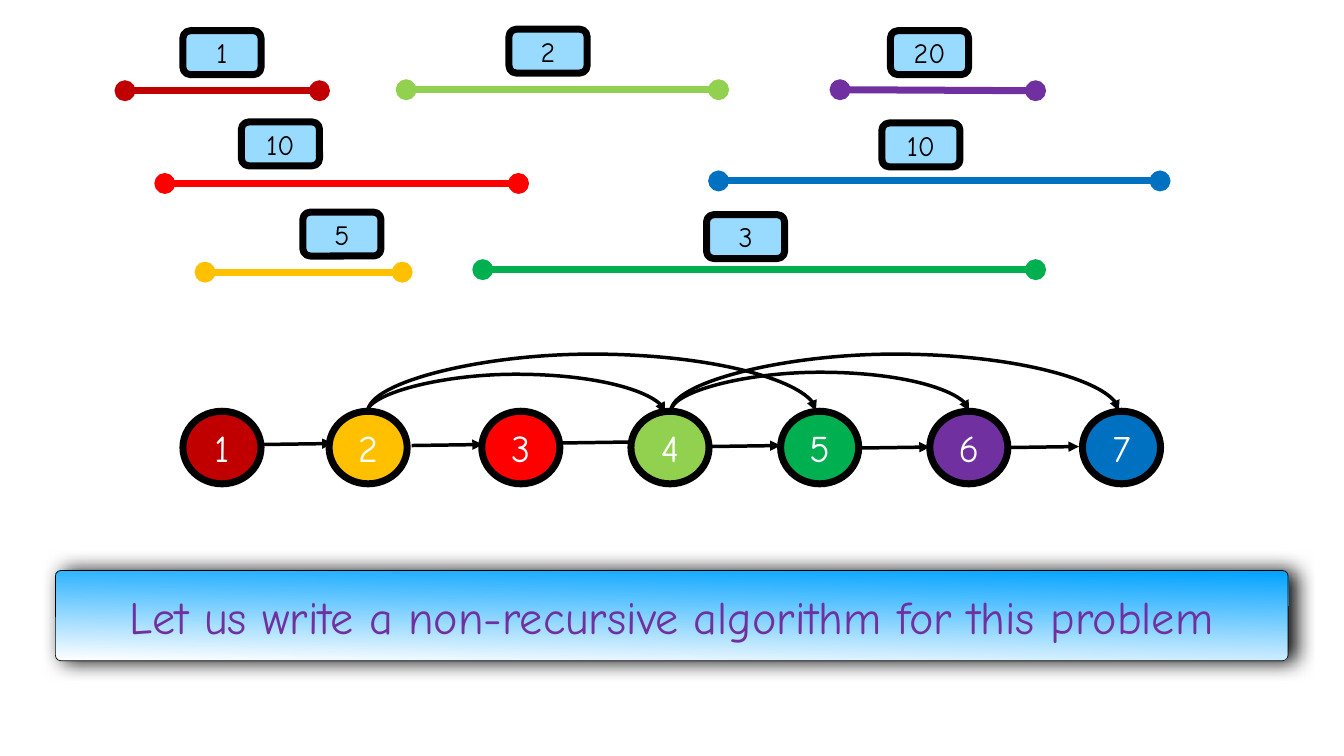
from pptx import Presentation
from pptx.dml.color import RGBColor
from pptx.enum.shapes import MSO_CONNECTOR, MSO_SHAPE
from pptx.enum.text import MSO_ANCHOR, MSO_AUTO_SIZE, PP_ALIGN
from pptx.oxml import parse_xml
from pptx.oxml.ns import nsdecls, qn
from pptx.util import Inches, Pt

STRAIGHT, CURVE = MSO_CONNECTOR.STRAIGHT, MSO_CONNECTOR.CURVE
ROUNDED, ELLIPSE = MSO_SHAPE.ROUNDED_RECTANGLE, MSO_SHAPE.OVAL
MIDDLE, CENTER = MSO_ANCHOR.MIDDLE, PP_ALIGN.CENTER
GROW, FIXED = MSO_AUTO_SIZE.SHAPE_TO_FIT_TEXT, MSO_AUTO_SIZE.NONE

FONT = "Comic Neue"
BLACK, WHITE, PALE_BLUE, SKY_BLUE = "000000", "FFFFFF", "99DAFF", "00A2FF"
DARK_RED, AMBER, RED, LIME = "C00000", "FFC000", "FF0000", "92D050"
GREEN, PURPLE, BLUE = "00B050", "7030A0", "0070C0"

BOX_WIDTH, WEIGHT_HEIGHT, NODE_HEIGHT = 1.55, 0.87, 1.44
NODE_TOP = 8.16
EDGE_LENGTH, EDGE_RISE = 1.41, 0.02
ARC_DROP = Pt(1)  # height difference between the two ends of an arc

# colour, start x, start y, end x, end y, weight, weight left, weight top
INTERVALS = [
    (DARK_RED, 2.48, 1.8, 6.34, 1.8, "1", 3.63, 0.61),
    (AMBER, 4.07, 5.4, 7.98, 5.4, "5", 6.01, 4.21),
    (RED, 3.27, 3.64, 10.29, 3.64, "10", 4.79, 2.42),
    (LIME, 8.06, 1.78, 14.26, 1.78, "2", 10.1, 0.58),
    (GREEN, 9.58, 5.35, 20.55, 5.35, "3", 14.02, 4.26),
    (PURPLE, 16.67, 1.78, 20.55, 1.8, "20", 17.67, 0.61),
    (BLUE, 14.26, 3.59, 23.02, 3.59, "10", 17.5, 2.44),
]
NODE_LEFTS = [3.63, 6.53, 9.56, 12.52, 15.49, 18.45, 21.48]
# start x, start y, has an arrowhead
EDGES = [
    (5.19, 8.82, True), (8.17, 8.84, True), (11.11, 8.79, False),
    (14.08, 8.86, True), (17.04, 8.89, True), (20, 8.88, True),
]
# start x, end x, base y, rise as a multiple of ARC_DROP
ARCS = [
    (13.31, 22.2, 8.16, 82.8), (13.31, 19.23, 8.16, 56.7),
    (7.3, 16.19, 8.16, 82.8), (7.27, 13.2, 8.2, 56.7),
]


def rgb(color):
    return RGBColor.from_string(color)


def add_line(slide, kind, ends, color, width, head=None, tail=None):
    """Connect ends (x1, y1, x2, y2), already in lengths."""
    line = slide.shapes.add_connector(kind, *ends)
    line.line.color.rgb = rgb(color)
    line.line.width = Pt(width)
    for tag, style in (("headEnd", head), ("tailEnd", tail)):
        if style:
            line.line._get_or_add_ln().append(
                parse_xml(f'<a:{tag} {nsdecls("a")} type="{style}"/>'))
    line._element.spPr.append(parse_xml(f'<a:effectLst {nsdecls("a")}/>'))
    return line


def add_arc(slide, start_x, end_x, base_y, rise):
    """Arc over the nodes: an upright curved connector turned by 90 degrees."""
    middle_x, middle_y = Inches((start_x + end_x) / 2), Inches(base_y)
    half_span, half_drop = Inches((end_x - start_x) / 2), ARC_DROP // 2
    ends = (middle_x + half_drop, middle_y + half_span,
            middle_x - half_drop, middle_y - half_span)
    arc = add_line(slide, CURVE, ends, BLACK, 5, tail="triangle")
    properties = arc._element.spPr
    properties.find(qn("a:xfrm")).set("rot", "5400000")
    geometry = properties.find(qn("a:prstGeom"))
    for old in geometry.findall(qn("a:avLst")):
        geometry.remove(old)
    geometry.append(parse_xml(
        f'<a:avLst {nsdecls("a")}><a:gd name="adj1" '
        f'fmla="val {round(rise * 100000)}"/></a:avLst>'))


def add_box(slide, kind, place, text, size, color, fill=None, border=10, fit=GROW):
    box = slide.shapes.add_shape(kind, *(Inches(v) for v in place))
    box.shadow.inherit = False
    if fill:
        box.fill.solid()
        box.fill.fore_color.rgb = rgb(fill)
    box.line.color.rgb = rgb(BLACK)
    box.line.width = Pt(border)
    frame = box.text_frame
    inset = Inches(0.06)
    frame_format = {
        "margin_left": inset, "margin_right": inset, "margin_top": inset,
        "margin_bottom": inset, "vertical_anchor": MIDDLE,
        "word_wrap": True, "auto_size": fit,
    }
    for name, value in frame_format.items():
        setattr(frame, name, value)
    paragraph = frame.paragraphs[0]
    paragraph.alignment = CENTER
    run = paragraph.add_run()
    run.text = text
    for name, value in {"name": FONT, "size": Pt(size)}.items():
        setattr(run.font, name, value)
    run.font.color.rgb = rgb(color)
    return box


def add_banner(slide, text):
    banner = add_box(slide, ROUNDED, (1.1, 11.32, 24.46, 1.79), text, 66,
                     PURPLE, border=1, fit=FIXED)
    banner.adjustments[0] = 0.06
    banner.fill.gradient()
    banner.fill.gradient_angle = 269
    for stop, color in zip(banner.fill.gradient_stops, (SKY_BLUE, WHITE)):
        stop.color.rgb = rgb(color)
    banner._element.spPr.find(qn("a:effectLst")).append(parse_xml(
        f'<a:outerShdw {nsdecls("a")} blurRad="{Pt(28)}" dist="{Pt(9)}" dir="0" '
        f'rotWithShape="0"><a:srgbClr val="{BLACK}"><a:alpha val="97000"/>'
        '</a:srgbClr></a:outerShdw>'))


def main():
    deck = Presentation()
    deck.slide_width, deck.slide_height = Inches(26.67), Inches(15)
    slide = deck.slides.add_slide(deck.slide_layouts[6])

    for color, *ends, weight, left, top in INTERVALS:
        add_line(slide, STRAIGHT, [Inches(v) for v in ends], color, 10,
                 head="oval", tail="oval")
        add_box(slide, ROUNDED, (left, top, BOX_WIDTH, WEIGHT_HEIGHT), weight,
                40, BLACK, PALE_BLUE)

    node_colors = (DARK_RED, AMBER, RED, LIME, GREEN, PURPLE, BLUE)
    for number, (left, color) in enumerate(zip(NODE_LEFTS, node_colors), 1):
        add_box(slide, ELLIPSE, (left, NODE_TOP, BOX_WIDTH, NODE_HEIGHT),
                str(number), 54, WHITE, color)

    for x, y, has_arrow in EDGES:
        ends = (x, y, x + EDGE_LENGTH, y - EDGE_RISE)
        add_line(slide, STRAIGHT, [Inches(v) for v in ends], BLACK, 5,
                 tail="triangle" if has_arrow else None)
    for arc in ARCS:
        add_arc(slide, *arc)

    add_banner(slide, "Let us write a non-recursive algorithm for this problem")
    deck.save("out.pptx")


if __name__ == "__main__":
    main()
